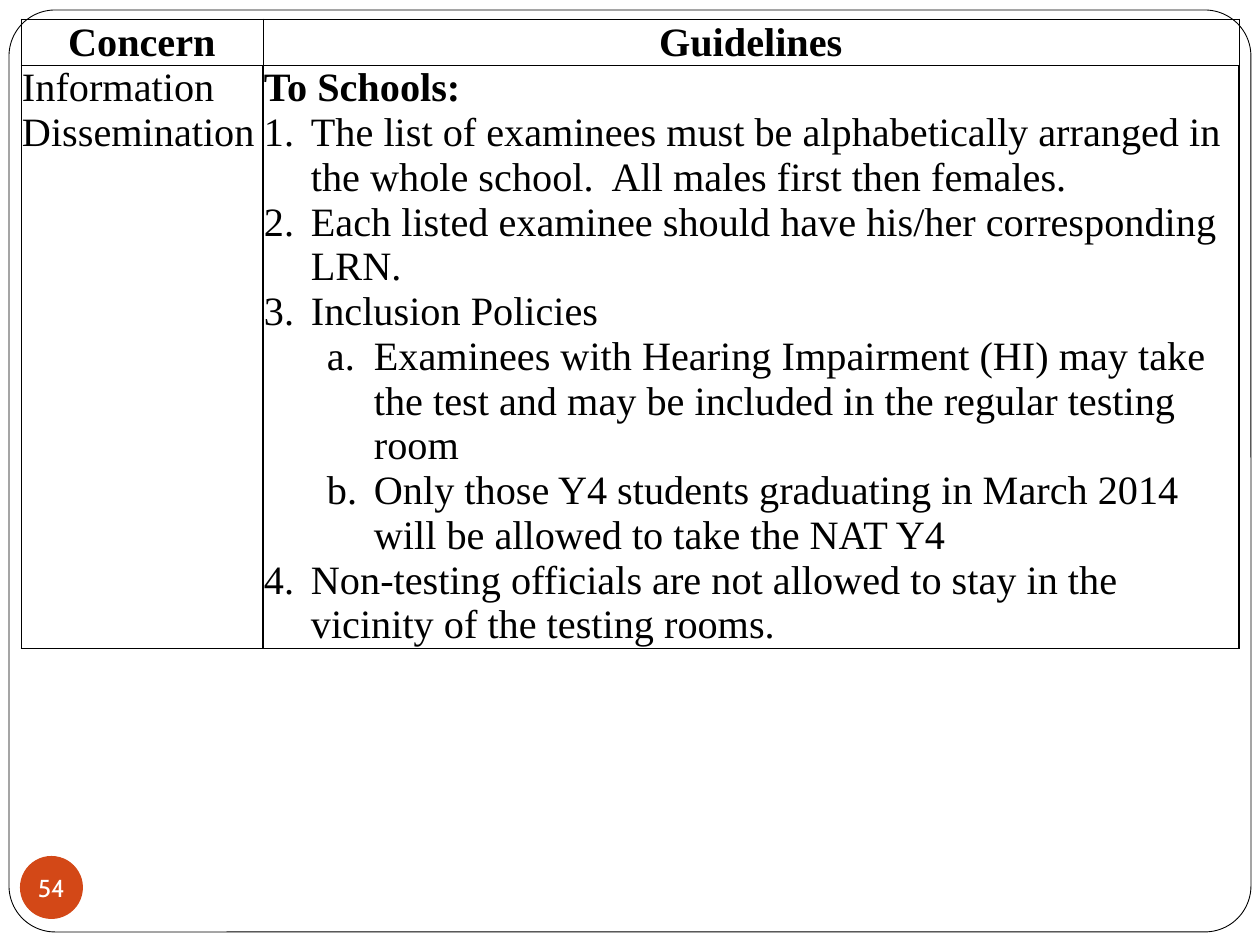
from lxml import etree
from pptx import Presentation
from pptx import util as u
from pptx.dml.color import RGBColor
from pptx.enum import shapes, text
from pptx.oxml.ns import qn

COLORS = {"ink": "000000", "paper": "FFFFFF", "badge": "D34817"}
SERIF = "Times New Roman"
HANG = 47
GUIDELINES = [
    (0, None, "To Schools:"),
    (0, "arabicPeriod", "The list of examinees must be alphabetically arranged in the whole school.  All males first then females."),
    (0, "arabicPeriod", "Each listed examinee should have his/her corresponding LRN."),
    (0, "arabicPeriod", "Inclusion Policies"),
    (1, "alphaLcPeriod", "Examinees with Hearing Impairment (HI) may take the test and may be included in the regular testing room"),
    (1, "alphaLcPeriod", "Only those Y4 students graduating in March 2014 will be allowed to take the NAT Y4"),
    (0, "arabicPeriod", "Non-testing officials are not allowed to stay in the vicinity of the testing rooms."),
]


def px(n):
    return u.Emu(round(n * 914400 / 126))


def rgb(name):
    return RGBColor.from_string(COLORS[name])


def style(p, font, size, color, bold=False, align=text.PP_ALIGN.LEFT):
    p.alignment = align
    p.font.name = font
    p.font.size = u.Pt(size)
    p.font.bold = bold
    p.font.color.rgb = rgb(color)


def add_shape(slide, kind, box, fill, line=None):
    sp = slide.shapes.add_shape(kind, *map(px, box))
    sp.shadow.inherit = False
    sp.fill.solid()
    sp.fill.fore_color.rgb = rgb(fill)
    if line:
        sp.line.color.rgb = rgb(line)
        sp.line.width = u.Pt(0.5)
    else:
        sp.line.fill.background()
    return sp


def add_badge(slide, number):
    sp = add_shape(slide, shapes.MSO_SHAPE.OVAL, (20, 856, 63, 63), "badge")
    tf = sp.text_frame
    tf.margin_left = tf.margin_right = tf.margin_top = tf.margin_bottom = 0
    tf.word_wrap = False
    tf.vertical_anchor = text.MSO_ANCHOR.MIDDLE
    p = tf.paragraphs[0]
    p.text = number
    style(p, "Cabin", 14, "paper", align=text.PP_ALIGN.CENTER)


def format_cell(cell, right=0.5, left=0.5):
    cell.margin_left = cell.margin_right = cell.margin_top = px(1)
    cell.margin_bottom = 0
    tcPr = cell._tc.get_or_add_tcPr()
    for side, width in (("L", left), ("R", right), ("T", 0.5), ("B", 0.5)):
        ln = etree.SubElement(tcPr, qn(f"a:ln{side}"), w=str(u.Pt(width)))
        fill = etree.SubElement(ln, qn("a:solidFill"))
        etree.SubElement(fill, qn("a:srgbClr"), val=COLORS["ink"])
    cell.fill.background()


def add_header(cell, label):
    format_cell(cell)
    cell.vertical_anchor = text.MSO_ANCHOR.BOTTOM
    p = cell.text_frame.paragraphs[0]
    p.text = label
    style(p, SERIF, 23, "ink", True, text.PP_ALIGN.CENTER)


def add_item(p, level, numbering, words):
    p.text = words
    p.level = level
    style(p, SERIF, 23, "ink", bold=numbering is None)
    pPr = p._p.get_or_add_pPr()
    pPr.set("marL", str(px(HANG + 63 * level)))
    pPr.set("indent", str(-px(HANG)))
    if numbering:
        bullet = etree.Element(qn("a:buAutoNum"), type=numbering)
        pPr.insert(0, bullet)


def add_guidelines_table(slide):
    widths, heights = (242, 976), (46, 583)
    frame = slide.shapes.add_table(2, 2, px(21), px(19), px(sum(widths)), px(sum(heights)))
    table = frame.table
    table.first_row = table.horz_banding = False
    for column, width in zip(table.columns, widths):
        column.width = px(width)
    for row, height in zip(table.rows, heights):
        row.height = px(height)
    for i, label in enumerate(("Concern", "Guidelines")):
        add_header(table.cell(0, i), label)

    concern, guidelines = table.cell(1, 0), table.cell(1, 1)
    format_cell(concern, right=1)
    p = concern.text_frame.paragraphs[0]
    p.text = "Information Dissemination"
    style(p, SERIF, 23, "ink")

    format_cell(guidelines, right=1, left=1)
    tf = guidelines.text_frame
    for i, item in enumerate(GUIDELINES):
        add_item(tf.add_paragraph() if i else tf.paragraphs[0], *item)


def main():
    prs = Presentation()
    prs.slide_width, prs.slide_height = px(1260), px(945)
    slide = prs.slides.add_slide(prs.slide_layouts[6])
    border = add_shape(slide, shapes.MSO_SHAPE.ROUNDED_RECTANGLE, (9, 10, 1242, 922), "paper", "ink")
    border.adjustments[0] = 0.05
    add_badge(slide, "54")
    add_guidelines_table(slide)
    prs.save("out.pptx")


if __name__ == "__main__":
    main()
